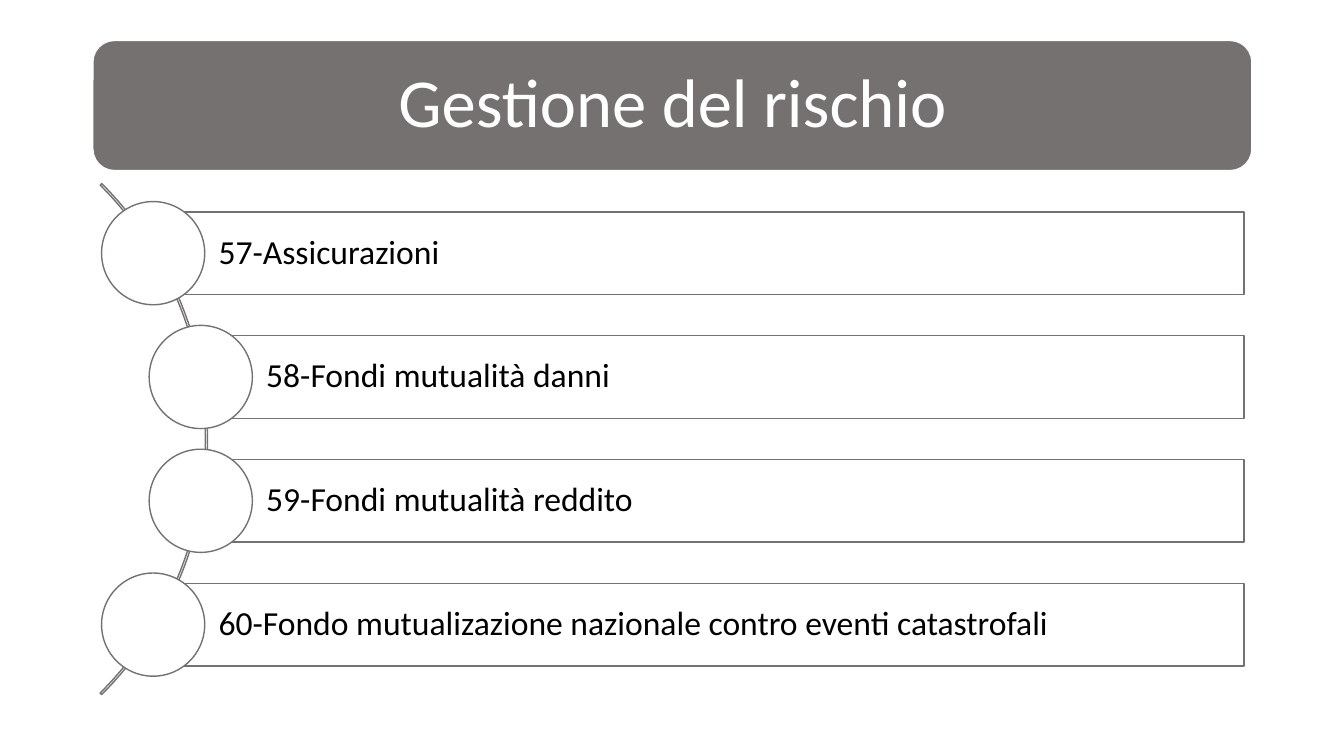
from collections import namedtuple

from pptx import Presentation
from pptx.dml.color import RGBColor
from pptx.enum.shapes import MSO_SHAPE
from pptx.enum.text import MSO_ANCHOR, MSO_AUTO_SIZE, PP_ALIGN
from pptx.util import Cm, Pt

ROUND, ARC = MSO_SHAPE.ROUNDED_RECTANGLE, MSO_SHAPE.BLOCK_ARC
RECT, OVAL = MSO_SHAPE.RECTANGLE, MSO_SHAPE.OVAL
MIDDLE, FIXED = MSO_ANCHOR.MIDDLE, MSO_AUTO_SIZE.NONE
CENTER, JUSTIFY = PP_ALIGN.CENTER, PP_ALIGN.JUSTIFY

Theme = namedtuple("Theme", "font gray white black title item line")
theme = Theme(
    font="Calibri",
    gray=RGBColor(0x76, 0x71, 0x71),
    white=RGBColor(0xFF, 0xFF, 0xFF),
    black=RGBColor(0, 0, 0),
    title=Pt(49),
    item=Pt(24),
    line=Pt(1),
)


def add(kind, left, top, width, height, fill=None, line=theme.gray):
    """Draw a preset shape, measured in cm, without shadow."""
    shape = slide.shapes.add_shape(kind, Cm(left), Cm(top), Cm(width), Cm(height))
    shape.shadow.inherit = False
    if fill is None:
        shape.fill.background()
    else:
        shape.fill.solid()
        shape.fill.fore_color.rgb = fill
    shape.line.color.rgb = line
    shape.line.width = theme.line
    return shape


def write(shape, text, size, color, align, left, pad):
    """Put one formatted line in a shape; left and pad are margins in cm."""
    frame = shape.text_frame
    frame.text = text
    frame.word_wrap = True
    frame.auto_size = FIXED
    frame.vertical_anchor = MIDDLE
    frame.margin_left = Cm(left)
    frame.margin_top = frame.margin_right = frame.margin_bottom = Cm(pad)
    line = frame.paragraphs[0]
    line.alignment = align
    line.line_spacing = 0.9
    font = line.runs[0].font
    font.name, font.size, font.color.rgb = theme.font, size, color


deck = Presentation()
deck.slide_width, deck.slide_height = Cm(33.87), Cm(19.05)
slide = deck.slides.add_slide(deck.slide_layouts[5])

# Title on its banner
banner = add(ROUND, 2.34, 1.02, 29.21, 3.28, fill=theme.gray, line=theme.white)
title = slide.shapes.title
title.left, title.top = Cm(2.5), Cm(1.18)
title.width, title.height = Cm(28.89), Cm(2.96)
write(title, "Gestione del rischio", size=theme.title, color=theme.white,
      align=CENTER, left=0.5, pad=0.5)
title._element.addprevious(banner._element)

# Curve that carries the circles
curve = add(ARC, -12.98, 1.96, 18.21, 18.21)
for index, value in enumerate((189, 27, 0.003)):
    curve.adjustments[index] = value

# One bar per measure, with a circle centred on its left edge
items = (
    (3.86, "57-Assicurazioni"),
    (5.06, "58-Fondi mutualità danni"),
    (5.06, "59-Fondi mutualità reddito"),
    (3.86, "60-Fondo mutualizazione nazionale contro eventi catastrofali"),
)
first, pitch, right = 5.34, 3.12, 31.35
height, circle = 2.08, 2.6
for row, (left, text) in enumerate(items):
    top = first + row * pitch
    bar = add(RECT, left, top, right - left, height)
    write(bar, text, size=theme.item, color=theme.black,
          align=JUSTIFY, left=1.65, pad=0.18)
    add(OVAL, left - circle / 2, top + (height - circle) / 2, circle, circle,
        fill=theme.white)

deck.save("out.pptx")
